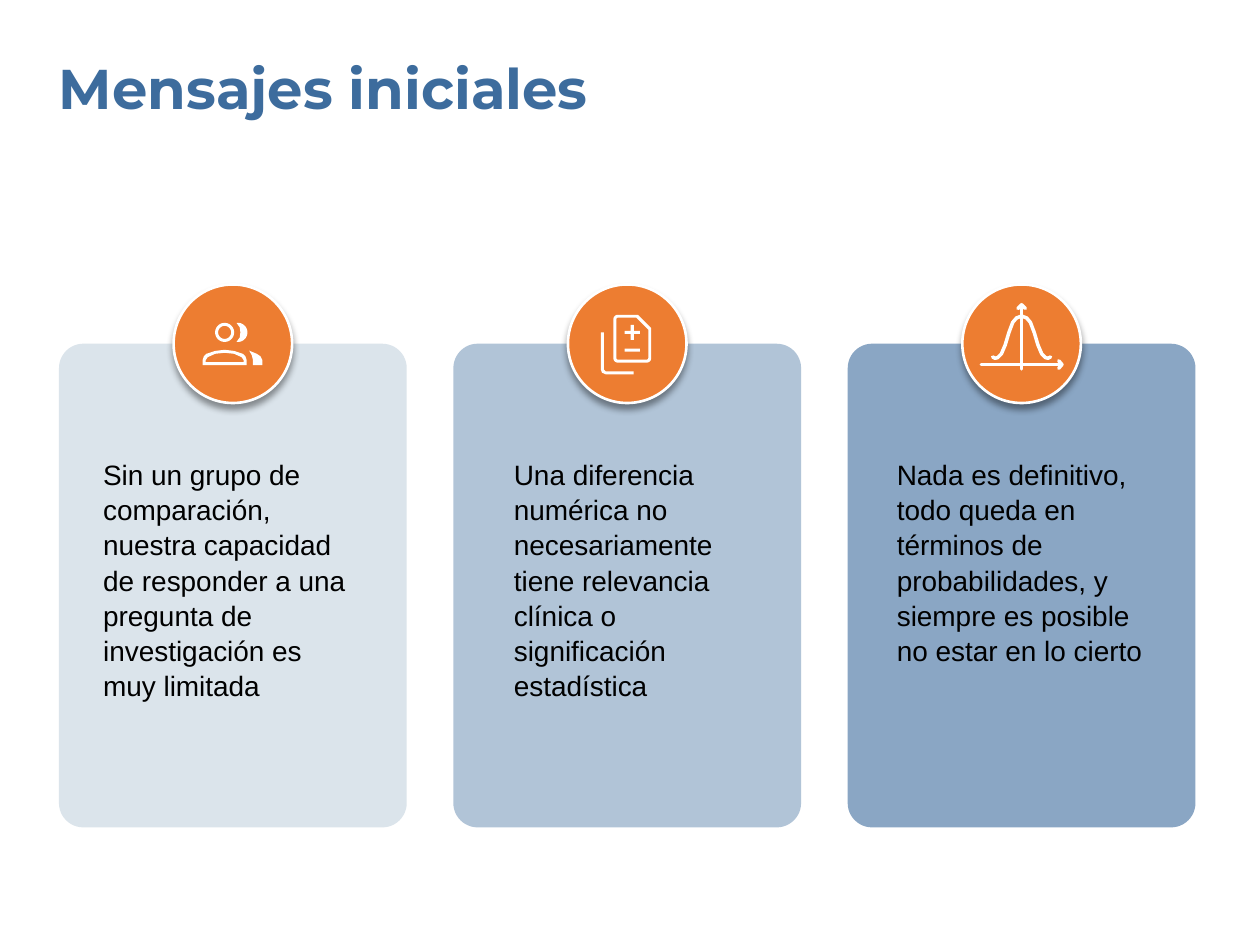
import math

import pptx
import pptx.dml.color
import pptx.enum.shapes
import pptx.enum.text
import pptx.oxml.ns
import pptx.util
from lxml import etree

Cm = pptx.util.Cm
Pt = pptx.util.Pt
RGBColor = pptx.dml.color.RGBColor
MSO_SHAPE = pptx.enum.shapes.MSO_SHAPE
qn = pptx.oxml.ns.qn

BLUE = RGBColor(0x3D, 0x6C, 0x9D)
PALE_BLUE = RGBColor(0xDB, 0xE4, 0xEB)
ORANGE = RGBColor(0xED, 0x7D, 0x31)
WHITE = RGBColor(0xFF, 0xFF, 0xFF)
BLACK = RGBColor(0x00, 0x00, 0x00)

CARD_LEFT, CARD_TOP, CARD_WIDTH, CARD_HEIGHT = 1.19, 6.93, 7.01, 9.75
CARD_PITCH = 7.95
BADGE_SIZE = 2.39
MESSAGE_TOP = 9.19
ICON_UNIT = 0.0254
ICON_PRECISION = 100


def arc(x, y, radius, start=0, end=360, steps=24):
    angles = [math.radians(start + (end - start) * i / steps) for i in range(steps + 1)]
    return [(x + radius * math.cos(a), y + radius * math.sin(a)) for a in angles]


def page(left, top, right, bottom, radius, fold):
    return (
        arc(left + radius, bottom - radius, radius, 90, 180, 6)
        + arc(left + radius, top + radius, radius, 180, 270, 6)
        + [(right - fold, top), (right, top + fold)]
        + arc(right - radius, bottom - radius, radius, 0, 90, 6)
    )


def box(left, top, right, bottom):
    return [(left, top), (right, top), (right, bottom), (left, bottom)]


def people():
    body = [(-24, 17), (-24, 13), (-23, 10), (-21, 8), (-14, 5.7), (-6.5, 4.8),
            (1, 5.7), (8, 8), (10, 10), (11, 13), (11, 17)]
    body_hole = [(-21.5, 14.7), (-21.5, 13), (-20, 10.7), (-14, 8), (-6.5, 7.2),
                 (1, 8), (7, 10.7), (8.6, 13), (8.6, 14.7)]
    back_body = [(16, 17), (16, 13), (15, 9), (13, 5.5), (19, 8), (22, 10),
                 (23.4, 13), (23.4, 17)]
    back_head = arc(4, -9, 7.6, -98, 98) + [(5.5, -5), (6, -9), (5.5, -13)]
    return [body, body_hole, back_body, back_head, arc(-6.5, -9, 7.6), arc(-6.5, -9, 5.2)]


def documents():
    plus = [(2.8, -15), (5.2, -15), (5.2, -10.2), (10, -10.2), (10, -7.8), (5.2, -7.8),
            (5.2, -3), (2.8, -3), (2.8, -7.8), (-2, -7.8), (-2, -10.2), (2.8, -10.2)]
    back_page = [(-21, -9), (-18.5, -9), (-18.5, 20.5), (-17, 22), (5, 22), (5, 24.3),
                 (-17, 24.3), (-20, 23), (-21, 20.5)]
    return [page(-11, -23, 19, 15, 3.5, 10.5), page(-8.6, -20.7, 16.7, 12.6, 1.2, 9.5),
            plus, box(-2, 3.8, 10, 6.2), back_page]


def bell_curve():
    right_half = [(0, -22), (4, -20.5), (7, -17), (10, -9), (13, 1), (16, 8),
                  (19, 11), (21, 11.5), (23, 10.5)]
    left_half = [(-x, y) for x, y in reversed(right_half[1:])]
    return [left_half + right_half, [(-32, 16.5), (32, 16.5)], [(0, 20), (0, -31)],
            [(29.5, 13.5), (32, 16.5), (29.5, 19.5)], [(-3, -28), (0, -31), (3, -28)]]


def write(frame, text, *, font="Arial", size=16, color=BLACK, bold=False, spacing=1.05):
    frame.word_wrap = True
    frame.auto_size = pptx.enum.text.MSO_AUTO_SIZE.SHAPE_TO_FIT_TEXT
    frame.margin_left = frame.margin_right = frame.margin_top = frame.margin_bottom = 0
    paragraph = frame.paragraphs[0]
    paragraph.line_spacing = spacing
    run = paragraph.add_run()
    run.text = text
    run.font.name = font
    run.font.size = Pt(size)
    run.font.bold = bold
    run.font.color.rgb = color


class SlideBuilder:
    def __init__(self, slide):
        self.shapes = slide.shapes
        self.accent = ORANGE
        self.ink = WHITE

    def text(self, left, top, width, height, words, **style):
        area = self.shapes.add_textbox(Cm(left), Cm(top), Cm(width), Cm(height))
        write(area.text_frame, words, **style)

    def card(self, left, color, opacity):
        card = self.shapes.add_shape(MSO_SHAPE.ROUNDED_RECTANGLE, Cm(left), Cm(CARD_TOP),
                                     Cm(CARD_WIDTH), Cm(CARD_HEIGHT))
        card.adjustments[0] = 0.07
        card.shadow.inherit = False
        card.fill.solid()
        card.fill.fore_color.rgb = color
        card.line.fill.background()
        if opacity < 100:
            tint = card._element.spPr.find(".//" + qn("a:srgbClr"))
            etree.SubElement(tint, qn("a:alpha"), val=str(opacity * 1000))

    def badge(self, center):
        badge = self.shapes.add_shape(
            MSO_SHAPE.OVAL, Cm(center - BADGE_SIZE / 2), Cm(CARD_TOP - BADGE_SIZE / 2),
            Cm(BADGE_SIZE), Cm(BADGE_SIZE))
        badge.fill.solid()
        badge.fill.fore_color.rgb = self.accent
        badge.line.color.rgb = self.ink
        badge.line.width = Pt(1.5)
        badge.shadow.inherit = False
        effects = badge._element.spPr.find(qn("a:effectLst"))
        shadow = etree.SubElement(effects, qn("a:outerShdw"), blurRad=str(Pt(4)),
                                  dist=str(Pt(3)), dir="5400000", rotWithShape="0")
        shade = etree.SubElement(shadow, qn("a:srgbClr"), val=str(BLACK))
        etree.SubElement(shade, qn("a:alpha"), val="40000")

    def icon(self, center, contours, stroked):
        scaled = [[(x * ICON_PRECISION, y * ICON_PRECISION) for x, y in contour]
                  for contour in contours]
        outline = self.shapes.build_freeform(*scaled[0][0],
                                             scale=Cm(ICON_UNIT) / ICON_PRECISION)
        for index, contour in enumerate(scaled):
            if index:
                outline.move_to(*contour[0])
            outline.add_line_segments(contour[1:], close=not stroked)
        icon = outline.convert_to_shape(Cm(center), Cm(CARD_TOP))
        icon.shadow.inherit = False
        if stroked:
            icon.fill.background()
            icon.line.color.rgb = self.ink
            icon.line.width = Pt(2)
            icon.line._ln.set("cap", "rnd")
        else:
            icon.fill.solid()
            icon.fill.fore_color.rgb = self.ink
            icon.line.fill.background()


CARDS = [
    (PALE_BLUE, 100, people(), False, (2.08, 5.21, 4.78),
     "Sin un grupo de comparación, nuestra capacidad de responder a una pregunta de "
     "investigación es muy limitada"),
    (BLUE, 40, documents(), False, (10.36, 5.28, 4.78),
     "Una diferencia numérica no necesariamente tiene relevancia clínica o "
     "significación estadística"),
    (BLUE, 60, bell_curve(), True, (18.08, 5.41, 4.11),
     "Nada es definitivo, todo queda en términos de probabilidades, y siempre es "
     "posible no estar en lo cierto"),
]


def main():
    presentation = pptx.Presentation()
    presentation.slide_width = Cm(25.4)
    presentation.slide_height = Cm(19.05)
    builder = SlideBuilder(presentation.slides.add_slide(presentation.slide_layouts[6]))
    builder.text(1.19, 1.07, 21.72, 1.37, "Mensajes iniciales",
                 font="Montserrat", size=32, color=BLUE, bold=True, spacing=1.0)
    for index, (color, opacity, icon, stroked, message_area, message) in enumerate(CARDS):
        left = CARD_LEFT + index * CARD_PITCH
        center = left + CARD_WIDTH / 2
        message_left, message_width, message_height = message_area
        builder.card(left, color, opacity)
        builder.badge(center)
        builder.text(message_left, MESSAGE_TOP, message_width, message_height, message)
        builder.icon(center, icon, stroked)
    presentation.save("out.pptx")


if __name__ == "__main__":
    main()
